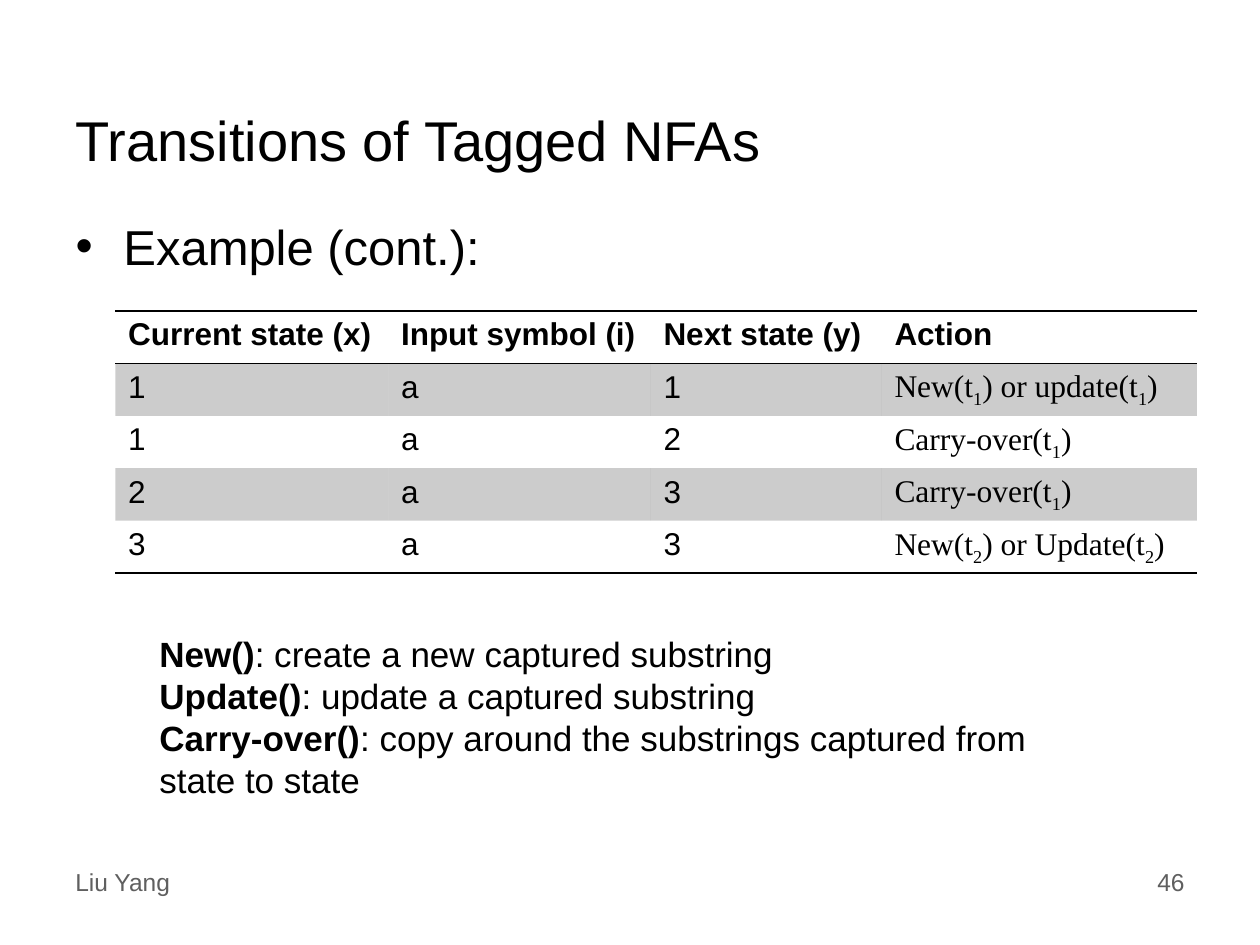
from lxml.etree import SubElement
from pptx import Presentation
from pptx.dml.color import RGBColor
from pptx.enum.text import MSO_ANCHOR, MSO_AUTO_SIZE, PP_ALIGN
from pptx.oxml.ns import qn
from pptx.util import Inches, Pt

COLORS = {"text": "000000", "muted": "5F5F5F", "line": "000000", "band": "000000"}
SANS, SERIF = "Arial", "Times New Roman"
NO_STYLE = "{2D5ABB26-0587-4C30-8999-92F81FD0307C}"
UNIT = Inches(10) / 120  # the slide is a grid of 120 columns by 90 rows

HEADER = ["Current state (x)", "Input symbol (i)", "Next state (y)", "Action"]
# In actions, the character after "_" is a subscript.
TRANSITIONS = [
    ["1", "a", "1", "New(t_1) or update(t_1)"],
    ["1", "a", "2", "Carry-over(t_1)"],
    ["2", "a", "3", "Carry-over(t_1)"],
    ["3", "a", "3", "New(t_2) or Update(t_2)"],
]
ACTIONS = [
    ("New()", ": create a new captured substring"),
    ("Update()", ": update a captured substring"),
    ("Carry-over()", ": copy around the substrings captured from state to state"),
]


def grid(*cells):
    return [round(c * UNIT) for c in cells]


class SlideBuilder:
    def __init__(self, prs):
        self.slide = prs.slides.add_slide(prs.slide_layouts[1])

    def run(self, p, text, size, color="text", font=SANS, bold=False, baseline=None):
        r = p.add_run()
        r.text = text
        r.font.size, r.font.name, r.font.bold = Pt(size), font, bold
        r.font.color.rgb = RGBColor.from_string(COLORS[color])
        if baseline:
            r.font._element.set("baseline", str(baseline))

    def place(self, sp, box, anchor):
        sp.left, sp.top, sp.width, sp.height = grid(*box)
        tf = sp.text_frame
        tf.word_wrap, tf.auto_size = True, MSO_AUTO_SIZE.NONE
        tf.vertical_anchor = anchor
        return tf.paragraphs[0]

    def title(self, box, text):
        p = self.place(self.slide.shapes.title, box, MSO_ANCHOR.MIDDLE)
        p.alignment = PP_ALIGN.LEFT
        self.run(p, text, 32)

    def bullet(self, box, text):
        p = self.place(self.slide.placeholders[1], box, MSO_ANCHOR.TOP)
        pPr = p._p.get_or_add_pPr()
        pPr.set("marL", str(Inches(0.38)))
        pPr.set("indent", str(-Inches(0.38)))
        p.space_before = Pt(0)
        SubElement(pPr, qn("a:buChar"), char="•")
        self.run(p, text, 28)

    def text(self, box, paragraphs, size, color="text", align=PP_ALIGN.LEFT):
        """Each paragraph is a list of (text, bold) runs."""
        sp = self.slide.shapes.add_textbox(*grid(*box))
        p = self.place(sp, box, MSO_ANCHOR.TOP)
        for i, runs in enumerate(paragraphs):
            if i:
                p = sp.text_frame.add_paragraph()
            p.alignment = align
            for text, bold in runs:
                self.run(p, text, size, color, bold=bold)

    def border(self, cell, side):
        ln = SubElement(cell._tc.get_or_add_tcPr(), qn(f"a:ln{side}"), w=str(Pt(1)))
        fill = SubElement(ln, qn("a:solidFill"))
        SubElement(fill, qn("a:srgbClr"), val=COLORS["line"])

    def shade(self, cell, banded):
        if not banded:
            cell.fill.background()
            return
        cell.fill.solid()
        cell.fill.fore_color.rgb = RGBColor.from_string(COLORS["band"])
        color = cell._tc.tcPr.find(f".//{qn('a:srgbClr')}")
        SubElement(color, qn("a:alpha"), val="20000")

    def cell_text(self, cell, text, bold, font):
        p = cell.text_frame.paragraphs[0]
        first, *rest = text.split("_")
        self.run(p, first, 18, font=font, bold=bold)
        for part in rest:
            self.run(p, part[0], 18, font=font, baseline=-25000)
            self.run(p, part[1:], 18, font=font)

    def table(self, left, top, widths, row_height, rows):
        frame = self.slide.shapes.add_table(
            len(rows), len(widths), *grid(left, top, sum(widths), row_height * len(rows)))
        table = frame.table
        table.first_row = table.horz_banding = False
        table._tbl.tblPr.find(qn("a:tableStyleId")).text = NO_STYLE
        for column, width in zip(table.columns, grid(*widths)):
            column.width = width
        last = len(rows) - 1
        for i, row in enumerate(rows):
            for j, text in enumerate(row):
                cell = table.cell(i, j)
                if i == 0:
                    self.border(cell, "T")
                if i in (0, last):
                    self.border(cell, "B")
                self.shade(cell, banded=i % 2 == 1)
                is_action = i > 0 and j == len(row) - 1
                self.cell_text(cell, text, i == 0, SERIF if is_action else SANS)


def main():
    prs = Presentation()
    prs.slide_width, prs.slide_height = grid(120, 90)
    s = SlideBuilder(prs)
    s.title((6, 8, 108, 10.5), "Transitions of Tagged NFAs")
    s.bullet((6, 20, 108, 9), "Example (cont.):")
    s.table(11, 29.6, [26, 25, 22, 30], 5, [HEADER] + TRANSITIONS)
    s.text((14, 59.6, 87, 17.4),
           [[(name, True), (meaning, False)] for name, meaning in ACTIONS], 20)
    s.text((6, 82, 30, 4), [[("Liu Yang", False)]], 14, "muted")
    s.text((86, 82, 28, 6.2), [[("46", False)]], 14, "muted", PP_ALIGN.RIGHT)
    prs.save("out.pptx")


if __name__ == "__main__":
    main()
